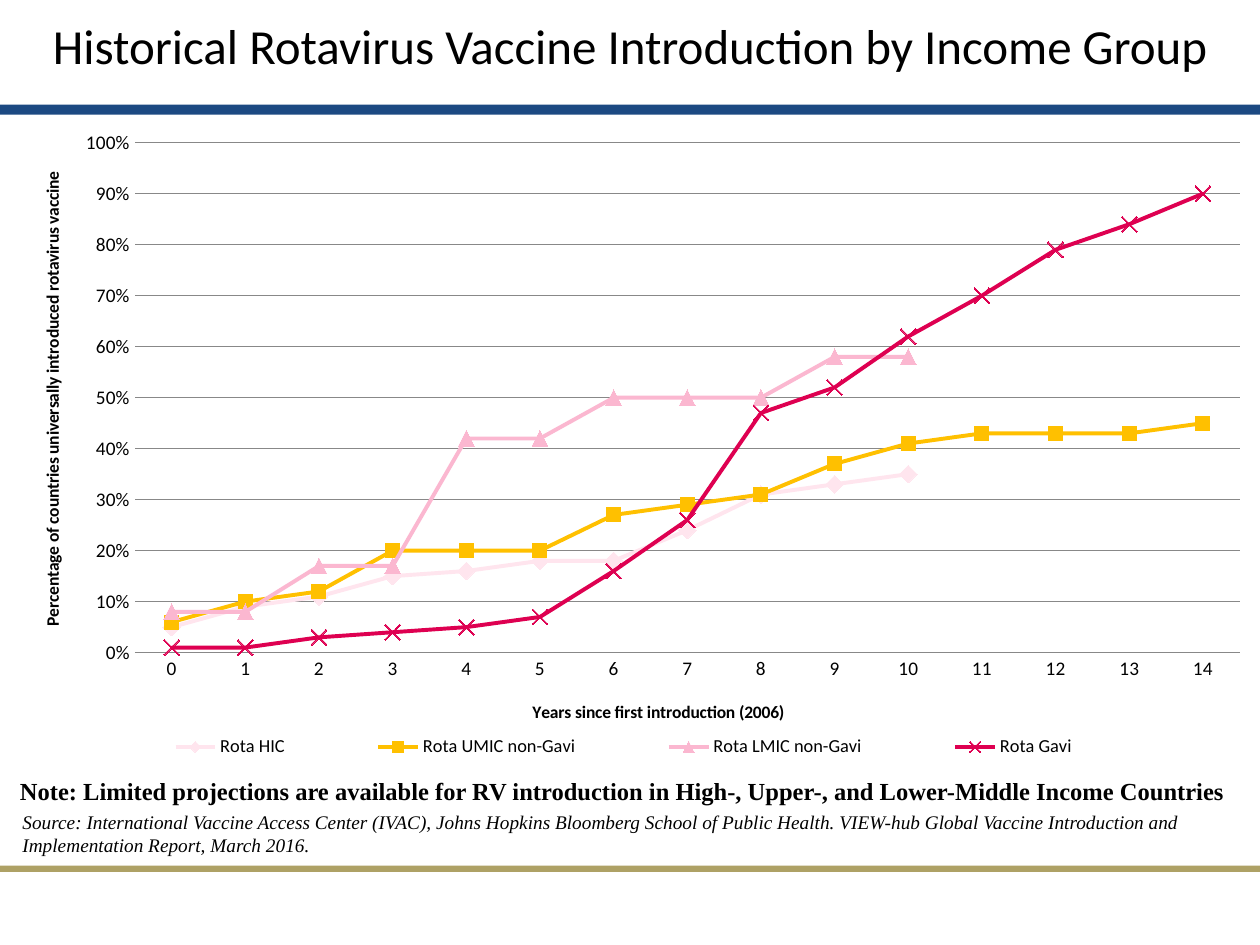
from lxml import etree
from pptx import Presentation
from pptx.chart.data import CategoryChartData
from pptx.dml.color import RGBColor
from pptx.enum.chart import (XL_CHART_TYPE, XL_LEGEND_POSITION,
                             XL_MARKER_STYLE, XL_TICK_MARK)
from pptx.enum.shapes import MSO_SHAPE
from pptx.enum.text import MSO_ANCHOR, MSO_AUTO_SIZE, PP_ALIGN
from pptx.oxml import parse_xml
from pptx.oxml.ns import nsdecls, qn
from pptx.util import Inches, Pt

LINE = XL_CHART_TYPE.LINE_MARKERS
BOTTOM = XL_LEGEND_POSITION.BOTTOM
NO_TICK = XL_TICK_MARK.NONE
RECT = MSO_SHAPE.RECTANGLE
TOP = MSO_ANCHOR.TOP
NO_FIT = MSO_AUTO_SIZE.NONE
CENTER = PP_ALIGN.CENTER
DIAMOND, SQUARE = XL_MARKER_STYLE.DIAMOND, XL_MARKER_STYLE.SQUARE
TRIANGLE, CROSS = XL_MARKER_STYLE.TRIANGLE, XL_MARKER_STYLE.X

COLORS = {"text": "000000", "navy": "1C4982", "gold": "847013",
          "grid": "888888", "hic": "FFE5EE", "umic": "FFC000",
          "lmic": "FBB7D0", "lmic_mark": "FFBDD5", "gavi": "DE0051"}
SERIF = "Times New Roman"

# Name, line colour, marker colour, marker style, marker size, values
SERIES = [
    ("Rota HIC", "hic", "hic", DIAMOND, 10,
     [.05, .09, .11, .15, .16, .18, .18, .24, .31, .33, .35]),
    ("Rota UMIC non-Gavi", "umic", "umic", SQUARE, 8,
     [.06, .1, .12, .2, .2, .2, .27, .29, .31, .37, .41, .43, .43, .43, .45]),
    ("Rota LMIC non-Gavi", "lmic", "lmic_mark", TRIANGLE, 9,
     [.08, .08, .17, .17, .42, .42, .5, .5, .5, .58, .58]),
    ("Rota Gavi", "gavi", None, CROSS, 9,
     [.01, .01, .03, .04, .05, .07, .16, .26, .47, .52, .62, .7, .79, .84, .9]),
]


def tint(name):
    return RGBColor.from_string(COLORS[name])


def style(font, **values):
    base = {"name": "Calibri", "size": Pt(11), "bold": False}
    for key, value in {**base, **values}.items():
        setattr(font, key, value)
    font.color.rgb = tint("text")


def stroke(line, name, width):
    line.color.rgb = tint(name)
    line.width = Pt(width)


def place(part, index, x, y, w=None, h=None, inner=False):
    """Give a chart part a fixed layout in fractions of the chart."""
    for old in part.findall(qn("c:layout")):
        part.remove(old)
    layout = parse_xml(f"<c:layout {nsdecls('c')}><c:manualLayout/></c:layout>")
    rules = [("layoutTarget", "inner")] if inner else []
    rules += [("xMode", "edge"), ("yMode", "edge"), ("x", x), ("y", y)]
    if w:
        rules += [("w", w), ("h", h)]
    for tag, value in rules:
        etree.SubElement(layout[0], qn(f"c:{tag}")).set("val", str(value))
    part.insert(index, layout)


def add_bar(slide, box, color, alpha=None):
    bar = slide.shapes.add_shape(RECT, *map(Inches, box))
    bar.shadow.inherit = False
    bar.fill.solid()
    bar.fill.fore_color.rgb = tint(color)
    bar.line.fill.background()
    if alpha:
        shade = bar.element.spPr.find(".//" + qn("a:srgbClr"))
        etree.SubElement(shade, qn("a:alpha")).set("val", str(alpha * 1000))


def add_title(slide, box, text):
    title = slide.shapes.title
    title.left, title.top, title.width, title.height = map(Inches, box)
    frame = title.text_frame
    frame.text = text
    frame.auto_size = NO_FIT
    frame.vertical_anchor = TOP
    frame.paragraphs[0].alignment = CENTER
    style(frame.paragraphs[0].font, size=Pt(28))


def add_note(slide, box, text, **values):
    frame = slide.shapes.add_textbox(*map(Inches, box)).text_frame
    frame.word_wrap = True
    frame.text = text
    style(frame.paragraphs[0].font, name=SERIF, **values)


def name_axis(axis, text, x, y, turn=0):
    title = axis.axis_title
    title.text_frame.text = text
    style(title.text_frame.paragraphs[0].font, size=Pt(10), bold=True)
    title.element.find(".//" + qn("a:bodyPr")).set("rot", str(turn * 60000))
    place(title.element, 1, x, y)


def add_trend(slide, box):
    data = CategoryChartData(number_format="0%")
    data.categories = [str(year) for year in range(15)]
    for name, *_, values in SERIES:
        data.add_series(name, values)
    chart = slide.shapes.add_chart(LINE, *map(Inches, box), data).chart
    chart.has_title = False
    style(chart.font, size=Pt(10))

    # Axes
    years, share = chart.category_axis, chart.value_axis
    for axis in (years, share):
        axis.major_tick_mark = axis.minor_tick_mark = NO_TICK
        style(axis.tick_labels.font)
    stroke(years.format.line, "grid", 0.75)
    share.format.line.fill.background()
    share.minimum_scale, share.maximum_scale, share.major_unit = 0, 1, 0.1
    share.tick_labels.number_format = "0%"
    share.tick_labels.number_format_is_linked = False
    stroke(share.major_gridlines.format.line, "grid", 0.75)
    name_axis(years, "Years since first introduction (2006)", 0.42, 0.89)
    name_axis(share, "Percentage of countries universally introduced "
              "rotavirus vaccine", 0.03, 0.08, -90)

    # Lines and markers
    plot = chart.plots[0]
    plot.vary_by_categories = False
    for series, (_, color, mark, shape, size, _) in zip(plot.series, SERIES):
        series.smooth = False
        stroke(series.format.line, color, 2.25)
        marker = series.marker
        marker.style, marker.size = shape, size
        stroke(marker.format.line, mark or color, 0.75)
        if mark:
            marker.format.fill.solid()
            marker.format.fill.fore_color.rgb = tint(mark)
        else:
            marker.format.fill.background()

    # Legend and plot area
    chart.has_legend = True
    chart.legend.position = BOTTOM
    chart.legend.include_in_layout = False
    style(chart.legend.font, size=Pt(10.5))
    root = chart.element.find(qn("c:chart"))
    place(root.find(qn("c:legend")), 1, 0.07, 0.94, 0.85, 0.05)
    place(root.find(qn("c:plotArea")), 0, 0.107, 0.041, 0.877, 0.78, True)


def main():
    deck = Presentation()
    deck.slide_width, deck.slide_height = Inches(10), Inches(7.5)
    slide = deck.slides.add_slide(deck.slide_layouts[5])
    add_bar(slide, (0, 0.83, 10, 0.08), "navy")
    add_bar(slide, (0, 6.87, 10, 0.05), "gold", 65)
    add_title(slide, (0, 0.07, 10, 0.75),
              "Historical Rotavirus Vaccine Introduction by Income Group")
    add_note(slide, (0.06, 6.11, 10, 0.34),
             "Note: Limited projections are available for RV introduction in "
             "High-, Upper-, and Lower-Middle Income Countries",
             size=Pt(14), bold=True)
    add_note(slide, (0.08, 6.38, 9.74, 0.47),
             "Source: International Vaccine Access Center (IVAC), Johns Hopkins "
             "Bloomberg School of Public Health. VIEW-hub Global Vaccine "
             "Introduction and Implementation Report, March 2016.", italic=True)
    add_trend(slide, (0, 0.92, 10, 5.19))
    deck.save("out.pptx")


if __name__ == "__main__":
    main()
